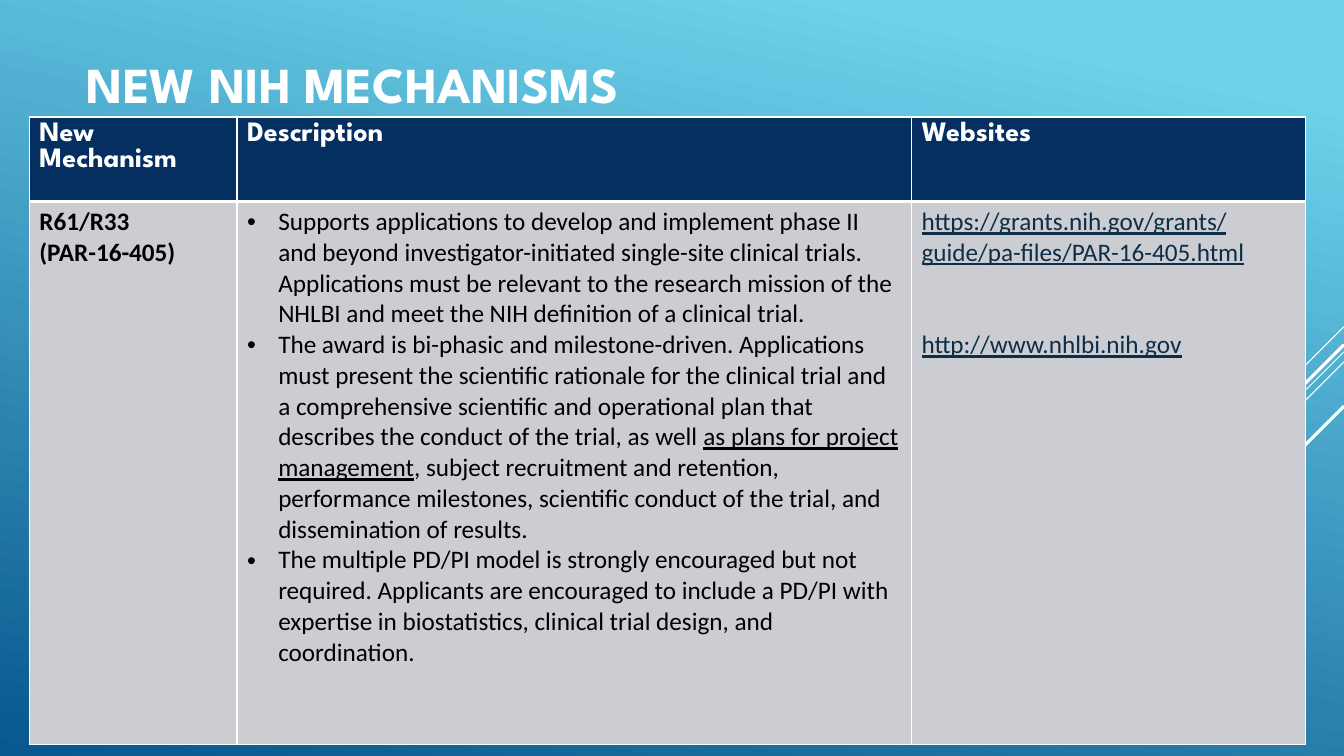
from dataclasses import dataclass
from pptx import Presentation, util as u
from pptx.dml.color import RGBColor
from pptx.enum import shapes, text
from pptx.oxml import parse_xml
from pptx.oxml.ns import nsdecls


@dataclass(frozen=True)
class Theme:
    sky: str = "6ED2EB"
    deep: str = "06588E"
    white: str = "FFFFFF"
    black: str = "000000"
    navy: str = "052F61"
    grey: str = "CCCDD2"
    link: str = "0D2E46"
    head: str = "League Spartan"
    body: str = "Calibri"
    title: int = 36
    label: int = 20
    copy: int = 18


T = Theme()
HEADS = ["New Mechanism", "Description", "Websites"]
CODES = ["R61/R33", "(PAR-16-405)"]
POINTS = [
    ["Supports applications to develop and implement phase II and beyond "
     "investigator-initiated single-site clinical trials. Applications must be "
     "relevant to the research mission of the NHLBI and meet the NIH definition "
     "of a clinical trial."],
    ["The award is bi-phasic and milestone-driven. Applications must present the "
     "scientific rationale for the clinical trial and a comprehensive scientific "
     "and operational plan that describes the conduct of the trial, as well ",
     "as plans for project management",
     ", subject recruitment and retention, performance milestones, scientific "
     "conduct of the trial, and dissemination of results."],
    ["The multiple PD/PI model is strongly encouraged but not required. "
     "Applicants are encouraged to include a PD/PI with expertise in "
     "biostatistics, clinical trial design, and coordination."],
]
LINKS = ["https://grants.nih.gov/grants/guide/pa-files/PAR-16-405.html",
         "http://www.nhlbi.nih.gov"]


def write(para, words, size=T.copy, font=T.body, color=T.black, bold=False, under=False):
    run = para.add_run()
    run.text = words
    run.font.size = u.Pt(size)
    run.font.name = font
    run.font.color.rgb = RGBColor.from_string(color)
    run.font.bold = bold
    run.font.underline = under


def lines(frame, count):
    return [frame.paragraphs[0]] + [frame.add_paragraph() for _ in range(count - 1)]


def bullet(para, indent):
    props = para._p.get_or_add_pPr()
    props.set("marL", str(indent))
    props.set("indent", str(-indent))
    props.append(parse_xml(f'<a:buFont {nsdecls("a")} typeface="Arial"/>'))
    props.append(parse_xml(f'<a:buChar {nsdecls("a")} char="•"/>'))


def style(cell, fill, top, bottom):
    props = cell._tc.get_or_add_tcPr()
    for side, width in zip("LRTB", (1, 1, top, bottom)):
        props.append(parse_xml(
            f'<a:ln{side} {nsdecls("a")} w="{u.Pt(width)}"><a:solidFill>'
            f'<a:srgbClr val="{T.white}"/></a:solidFill></a:ln{side}>'))
    cell.fill.solid()
    cell.fill.fore_color.rgb = RGBColor.from_string(fill)


def draw_back(slide):
    fill = slide.background.fill
    fill.gradient()
    fill.gradient_angle = 258
    for stop, color, place in zip(fill.gradient_stops, (T.sky, T.deep), (0.1, 1)):
        stop.color.rgb = RGBColor.from_string(color)
        stop.position = place


def draw_rays(slide, right):
    rays = [(3.24, 1, 0.75), (3.49, 3.26, 0.75), (3.59, 2.07, 0.75),
            (3.42, 1.91, 2.25), (4.03, 1.39, 2.25)]
    for top, span, width in rays:
        ray = slide.shapes.add_connector(
            shapes.MSO_CONNECTOR.STRAIGHT, u.Inches(right), u.Inches(top),
            u.Inches(right - span), u.Inches(top + span))
        ray.line.color.rgb = RGBColor.from_string(T.white)
        ray.line.width = u.Pt(width)
        ray._element.spPr.append(parse_xml(f'<a:effectLst {nsdecls("a")}/>'))


def draw_title(slide, left, top, width, height):
    title = slide.shapes.title
    title.left, title.top = u.Inches(left), u.Inches(top)
    title.width, title.height = u.Inches(width), u.Inches(height)
    frame = title.text_frame
    frame.auto_size = text.MSO_AUTO_SIZE.NONE
    frame.vertical_anchor = text.MSO_ANCHOR.MIDDLE
    para = frame.paragraphs[0]
    para.alignment = text.PP_ALIGN.LEFT
    write(para, "NEW NIH MECHANISMS", size=T.title, font=T.head, color=T.white, bold=True)


def draw_table(slide, left, top, width, height):
    table = slide.shapes.add_table(
        2, 3, u.Inches(left), u.Inches(top), u.Inches(width), u.Inches(height)).table
    table.horz_banding = False
    first, last = 2.06, 3.91
    for col, size in zip(table.columns, (first, width - first - last, last)):
        col.width = u.Inches(size)
    for row, size in zip(table.rows, (0.84, height - 0.84)):
        row.height = u.Inches(size)

    for col, label in enumerate(HEADS):
        style(table.cell(0, col), T.navy, 1, 3)
        style(table.cell(1, col), T.grey, 3, 1)
        write(table.cell(0, col).text_frame.paragraphs[0], label,
              size=T.label, font=T.head, color=T.white, bold=True)

    code, about, sites = [table.cell(1, col).text_frame for col in range(3)]
    for para, words in zip(lines(code, len(CODES)), CODES):
        write(para, words, bold=True)
    for para, parts in zip(lines(about, len(POINTS)), POINTS):
        bullet(para, u.Inches(0.31))
        for spot, words in enumerate(parts):
            write(para, words, under=spot == 1)
    paras = lines(sites, len(LINKS))
    for para, words in zip(paras, LINKS):
        write(para, words, color=T.link, under=True)
    paras[1].space_before = u.Pt(44)


def main():
    deck = Presentation()
    deck.slide_width, deck.slide_height = u.Inches(13.33), u.Inches(7.5)
    slide = deck.slides.add_slide(deck.slide_layouts[5])
    draw_back(slide)
    draw_rays(slide, 13.33)
    draw_title(slide, 0.76, 0, 9.33, 1.65)
    draw_table(slide, 0.29, 1.16, 12.66, 6.23)
    deck.save("out.pptx")


if __name__ == "__main__":
    main()
